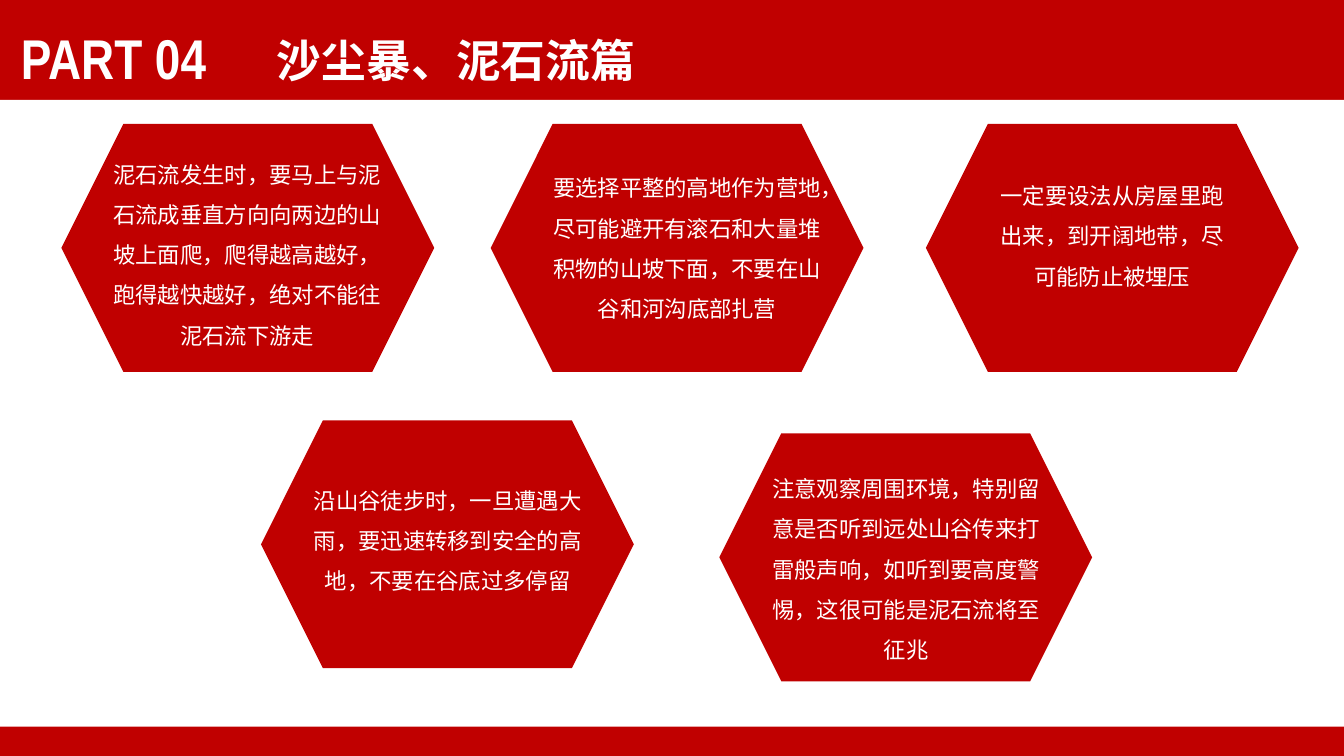
"""Build the slide on sandstorm and mudslide safety: five hexagons of advice."""
from lxml.etree import SubElement
from pptx import Presentation
from pptx.dml.color import RGBColor
from pptx.enum.shapes import MSO_SHAPE
from pptx.enum.text import MSO_ANCHOR, PP_ALIGN
from pptx.oxml.ns import qn
from pptx.util import Inches, Pt

RED, WHITE = "C00000", "FFFFFF"
LATIN, CHINESE = "Arial Narrow", "Noto Sans CJK JP"

deck = Presentation()
deck.slide_width, deck.slide_height = Inches(13.34), Inches(7.5)
COLUMN, ROW = deck.slide_width / 100, deck.slide_height / 100
page = deck.slides.add_slide(deck.slide_layouts[6])
page.background.fill.solid()
page.background.fill.fore_color.rgb = RGBColor.from_string(RED)


def add_block(shapes, preset, color, left, top, width, height):
    block = shapes.add_shape(preset, int(left * COLUMN), int(top * ROW),
                             int(width * COLUMN), int(height * ROW))
    block.shadow.inherit = False
    block.fill.solid()
    block.fill.fore_color.rgb = RGBColor.from_string(color)
    block.line.fill.background()


def add_text(shapes, text, left, top, width, height, size=16, bold=False,
             font=LATIN, align=PP_ALIGN.LEFT, spacing=1.0):
    box = shapes.add_textbox(int(left * COLUMN), int(top * ROW),
                             int(width * COLUMN), int(height * ROW))
    box.text_frame.word_wrap = True
    box.text_frame.vertical_anchor = MSO_ANCHOR.MIDDLE
    para = box.text_frame.paragraphs[0]
    para.alignment, para.line_spacing = align, spacing
    span = para.add_run()
    span.text = text
    span.font.size, span.font.bold, span.font.name = Pt(size), bold, font
    span.font.color.rgb = RGBColor.from_string(WHITE)
    SubElement(span._r.get_or_add_rPr(), qn("a:ea"), typeface=CHINESE)


add_block(page.shapes, MSO_SHAPE.RECTANGLE, WHITE, 0, 13.2, 100, 82.93)

HEXAGON_WIDTH, HEXAGON_HEIGHT = 27.74, 32.8
LINE_HEIGHT, MARGINS = 5.4, 1.27
TOP_ROW = 16.4
advice = [
    (4.57, TOP_ROW, 7.5, 18.67, 21.81, 5,
     "泥石流发生时，要马上与泥石流成垂直方向向两边的山坡上面爬，爬得越高越好，跑得越快越好，绝对不能往泥石流下游走"),
    (19.42, 55.6, 22.19, 61.87, 22.26, 3,
     "沿山谷徒步时，一旦遭遇大雨，要迅速转移到安全的高地，不要在谷底过多停留"),
    (53.52, 57.33, 55.92, 60.27, 23.01, 5,
     "注意观察周围环境，特别留意是否听到远处山谷传来打雷般声响，如听到要高度警惕，这很可能是泥石流将至征兆"),
    (36.51, TOP_ROW, 39.96, 20.53, 22.34, 4,
     "要选择平整的高地作为营地，尽可能避开有滚石和大量堆积物的山坡下面，不要在山谷和河沟底部扎营"),
    (68.89, TOP_ROW, 73.09, 21.6, 19.34, 3,
     "一定要设法从房屋里跑出来，到开阔地带，尽可能防止被埋压"),
]
for left, top, text_left, text_top, text_width, lines, text in advice:
    group = page.shapes.add_group_shape()
    add_block(group.shapes, MSO_SHAPE.HEXAGON, RED, left, top,
              HEXAGON_WIDTH, HEXAGON_HEIGHT)
    add_text(group.shapes, text, text_left, text_top, text_width,
             lines * LINE_HEIGHT + MARGINS, align=PP_ALIGN.CENTER, spacing=1.5)

add_text(page.shapes, "沙尘暴、泥石流篇", 19.87, 1.2, 49.18, 13.33,
         size=32, bold=True, font=CHINESE)
add_text(page.shapes, "PART 04", 0.82, 2.13, 30.88, 10.8, size=40, bold=True)

deck.save("out.pptx")
